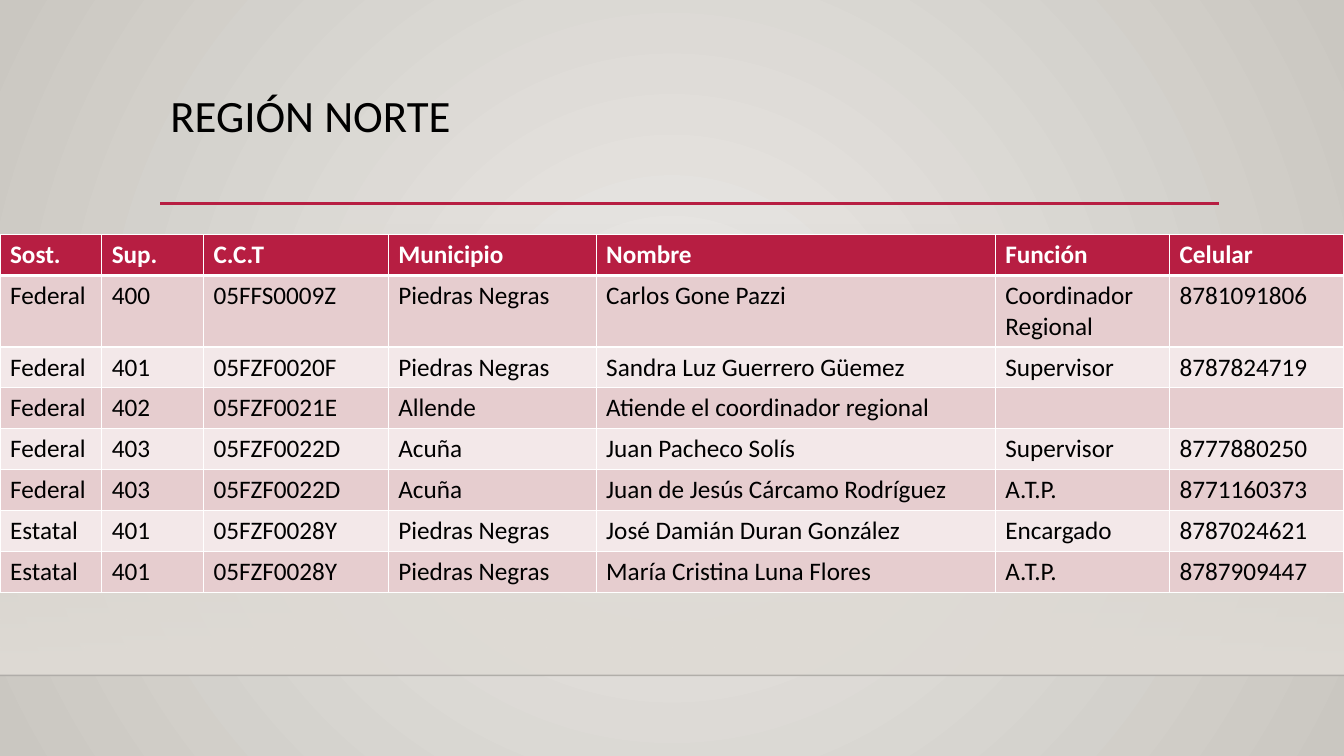
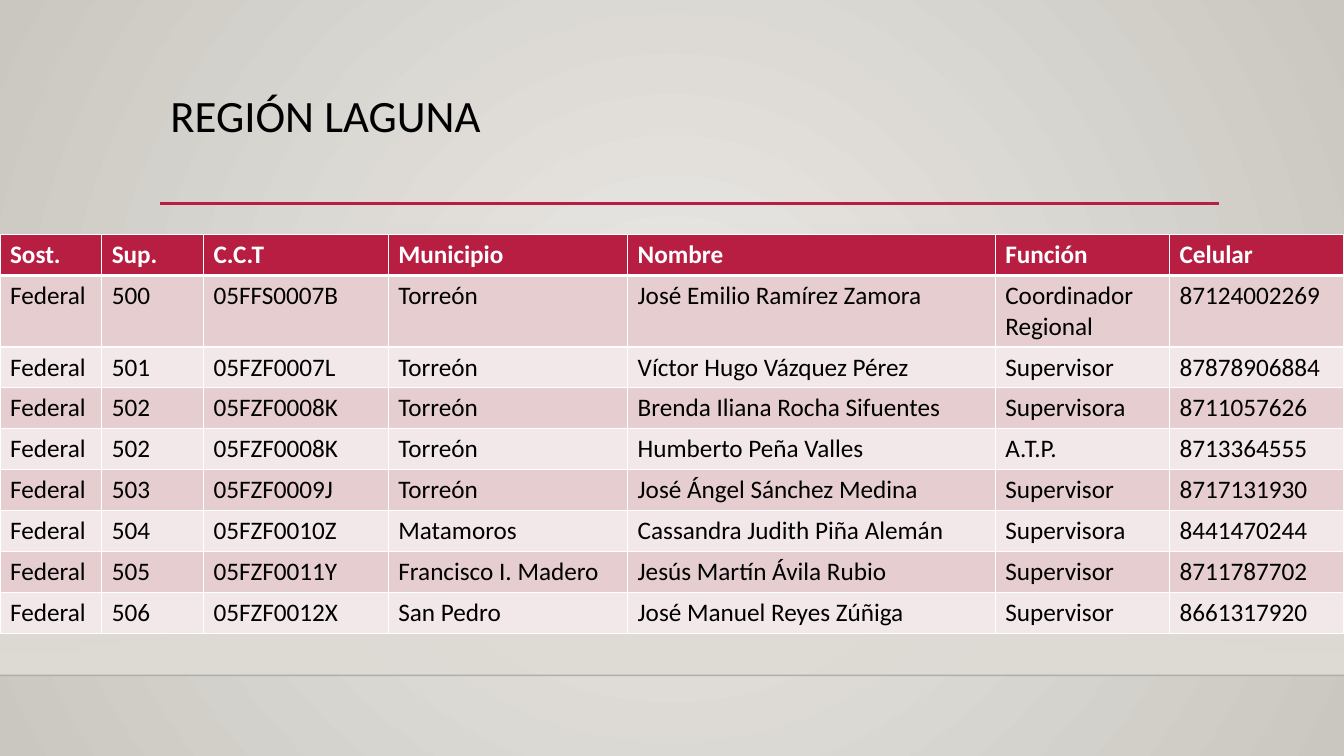
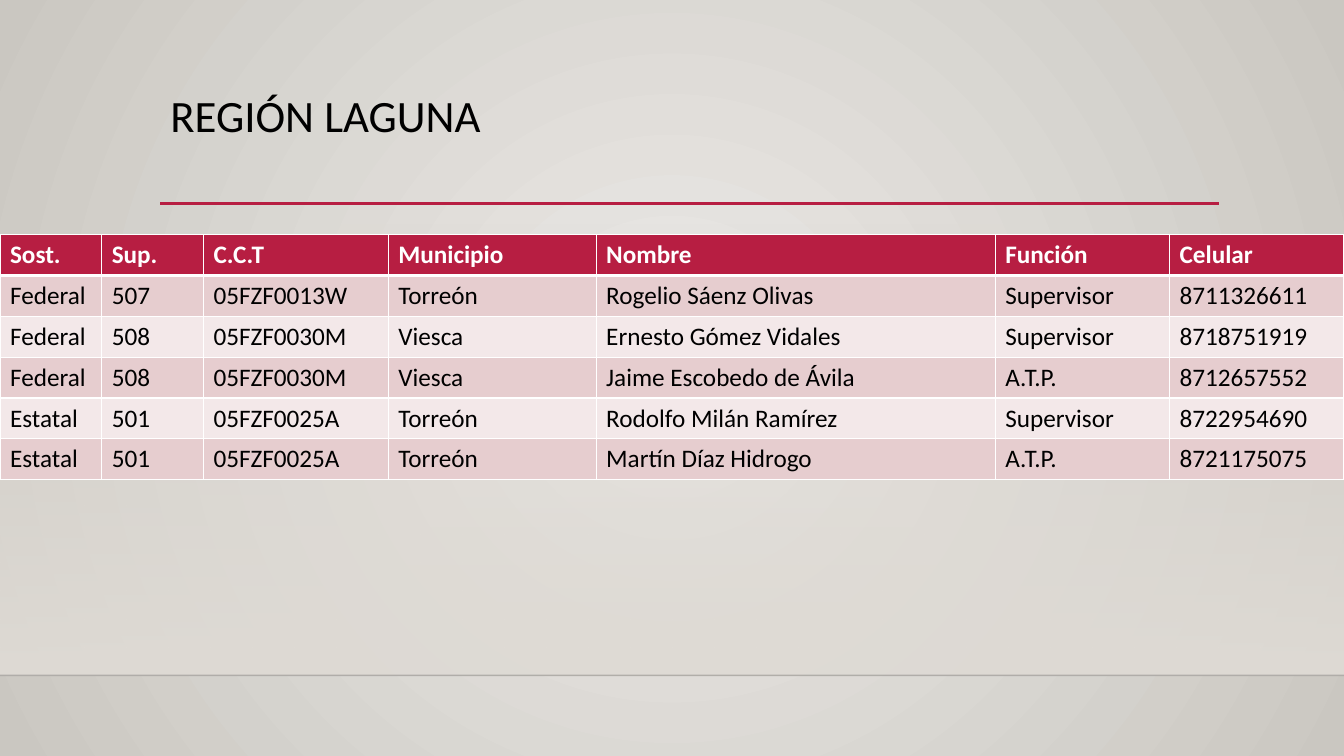
from lxml import etree
from pptx import Presentation
from pptx import util as u
from pptx.dml import color
from pptx.enum import shapes, text
from pptx.oxml import ns

HEADINGS = ("Sost.", "Sup.", "C.C.T", "Municipio", "Nombre", "Función", "Celular")

NORTE = [
    ("Federal", "400", "05FFS0009Z", "Piedras Negras", "Carlos Gone Pazzi", "Coordinador Regional", "8781091806"),
    ("Federal", "401", "05FZF0020F", "Piedras Negras", "Sandra Luz Guerrero Güemez", "Supervisor", "8787824719"),
    ("Federal", "402", "05FZF0021E", "Allende", "Atiende el coordinador regional", "", ""),
    ("Federal", "403", "05FZF0022D", "Acuña", "Juan Pacheco Solís", "Supervisor", "8777880250"),
    ("Federal", "403", "05FZF0022D", "Acuña", "Juan de Jesús Cárcamo Rodríguez", "A.T.P.", "8771160373"),
    ("Estatal", "401", "05FZF0028Y", "Piedras Negras", "José Damián Duran González", "Encargado", "8787024621"),
    ("Estatal", "401", "05FZF0028Y", "Piedras Negras", "María Cristina Luna Flores", "A.T.P.", "8787909447"),
]

LAGUNA_FEDERAL = [
    ("Federal", "500", "05FFS0007B", "Torreón", "José Emilio Ramírez Zamora", "Coordinador Regional", "87124002269"),
    ("Federal", "501", "05FZF0007L", "Torreón", "Víctor Hugo Vázquez Pérez", "Supervisor", "87878906884"),
    ("Federal", "502", "05FZF0008K", "Torreón", "Brenda Iliana Rocha Sifuentes", "Supervisora", "8711057626"),
    ("Federal", "502", "05FZF0008K", "Torreón", "Humberto Peña Valles", "A.T.P.", "8713364555"),
    ("Federal", "503", "05FZF0009J", "Torreón", "José Ángel Sánchez Medina", "Supervisor", "8717131930"),
    ("Federal", "504", "05FZF0010Z", "Matamoros", "Cassandra Judith Piña Alemán", "Supervisora", "8441470244"),
    ("Federal", "505", "05FZF0011Y", "Francisco I. Madero", "Jesús Martín Ávila Rubio", "Supervisor", "8711787702"),
    ("Federal", "506", "05FZF0012X", "San Pedro", "José Manuel Reyes Zúñiga", "Supervisor", "8661317920"),
]

LAGUNA_RESTO = [
    ("Federal", "507", "05FZF0013W", "Torreón", "Rogelio Sáenz Olivas", "Supervisor", "8711326611"),
    ("Federal", "508", "05FZF0030M", "Viesca", "Ernesto Gómez Vidales", "Supervisor", "8718751919"),
    ("Federal", "508", "05FZF0030M", "Viesca", "Jaime Escobedo de Ávila", "A.T.P.", "8712657552"),
    ("Estatal", "501", "05FZF0025A", "Torreón", "Rodolfo Milán Ramírez", "Supervisor", "8722954690"),
    ("Estatal", "501", "05FZF0025A", "Torreón", "Martín Díaz Hidrogo", "A.T.P.", "8721175075"),
]


def rgb(value):
    return color.RGBColor.from_string(value)


def fade(shape, percent):
    first_color = shape.element.xpath(".//a:srgbClr")[0]
    etree.SubElement(first_color, ns.qn("a:alpha"), val=str(percent * 1000))


class Directory:
    """Holds the deck style and the slide being drawn."""

    width, height = 960, 540
    font = "Calibri"
    accent, ink, white = "B71E42", "000000", "FFFFFF"
    stripes = ("E6CDCF", "F3E8E9")
    row_height = 29.2

    def __init__(self):
        self.presentation = Presentation()
        self.presentation.slide_width = u.Pt(self.width)
        self.presentation.slide_height = u.Pt(self.height)
        self.slide = None
        self.background()

    def gradient(self, fill, start, end):
        fill.gradient()
        for stop, value in zip(fill.gradient_stops, (start, end)):
            stop.color.rgb = rgb(value)

    def background(self):
        master = self.presentation.slide_master
        self.gradient(master.background.fill, "ECEAE7", "CAC7C1")
        linear = master.element.xpath(".//p:bgPr//a:lin")[0]
        radial = etree.Element(ns.qn("a:path"), path="circle")
        etree.SubElement(radial, ns.qn("a:fillToRect"), l="50000", t="50000", r="50000", b="50000")
        linear.getparent().replace(linear, radial)

    def new_slide(self, title):
        self.slide = self.presentation.slides.add_slide(self.presentation.slide_layouts[5])
        self.band(159, 323.4)
        fade(self.rule(0, self.width, 482.4, "000001", 1), 20)
        self.rule(114.5, 871, 145.3, self.accent, 2.5)
        self.title(title)

    def band(self, top, height):
        band = self.slide.shapes.add_shape(
            shapes.MSO_SHAPE.RECTANGLE, 0, u.Pt(top), u.Pt(self.width), u.Pt(height))
        band.shadow.inherit = False
        band.line.fill.background()
        self.gradient(band.fill, "DFDBD5", "DFDBD5")
        band.fill.gradient_angle = 270
        fade(band, 0)

    def rule(self, left, right, y, value, weight):
        rule = self.slide.shapes.add_connector(
            shapes.MSO_CONNECTOR.STRAIGHT, u.Pt(left), u.Pt(y), u.Pt(right), u.Pt(y))
        rule.line.color.rgb = rgb(value)
        rule.line.width = u.Pt(weight)
        etree.SubElement(rule.element.spPr, ns.qn("a:effectLst"))
        return rule

    def add_words(self, paragraph, words, size, value, bold=False):
        run = paragraph.add_run()
        run.text = words
        run.font.name, run.font.size, run.font.bold = self.font, u.Pt(size), bold
        run.font.color.rgb = rgb(value)

    def title(self, words):
        title = self.slide.shapes.title
        title.left, title.top = u.Pt(114.5), u.Pt(63.4)
        title.width, title.height = u.Pt(756), u.Pt(82.8)
        frame = title.text_frame
        frame.word_wrap = True
        frame.auto_size = text.MSO_AUTO_SIZE.NONE
        frame.vertical_anchor = text.MSO_ANCHOR.TOP
        paragraph = frame.paragraphs[0]
        paragraph.alignment = text.PP_ALIGN.LEFT
        paragraph.line_spacing = 0.9
        self.add_words(paragraph, words, 32, self.ink)

    def borders(self, cell, top, bottom):
        properties = cell._tc.get_or_add_tcPr()
        for side, weight in (("L", 1), ("R", 1), ("T", top), ("B", bottom)):
            line = etree.SubElement(properties, ns.qn(f"a:ln{side}"), w=str(u.Pt(weight)))
            solid = etree.SubElement(line, ns.qn("a:solidFill"))
            etree.SubElement(solid, ns.qn("a:srgbClr"), val=self.white)

    def table(self, people, town_width):
        rows = [HEADINGS, *people]
        widths = [72.7, 72.7, 132, town_width, 0, 124.5, 124.5]
        widths[4] = self.width - sum(widths)
        table = self.slide.shapes.add_table(
            len(rows), len(widths), 0, u.Pt(167.5),
            u.Pt(self.width), u.Pt(self.row_height * len(rows))).table
        for column, width in zip(table.columns, widths):
            column.width = u.Pt(width)
        for index, row in enumerate(rows):
            table.rows[index].height = u.Pt(self.row_height)
            header = index == 0
            fill = self.accent if header else self.stripes[(index - 1) % 2]
            for column, words in enumerate(row):
                cell = table.cell(index, column)
                self.borders(cell, 3 if index == 1 else 1, 3 if header else 1)
                cell.fill.solid()
                cell.fill.fore_color.rgb = rgb(fill)
                if words:
                    self.add_words(cell.text_frame.paragraphs[0], words, 18,
                                   self.white if header else self.ink, header)


def main():
    directory = Directory()
    for title, people, town_width in (
        ("REGIÓN NORTE", NORTE, 148.5),
        ("REGIÓN LAGUNA", LAGUNA_FEDERAL, 171),
        ("REGIÓN LAGUNA", LAGUNA_RESTO, 148.5),
    ):
        directory.new_slide(title)
        directory.table(people, town_width)
    directory.presentation.save("out.pptx")


if __name__ == "__main__":
    main()
